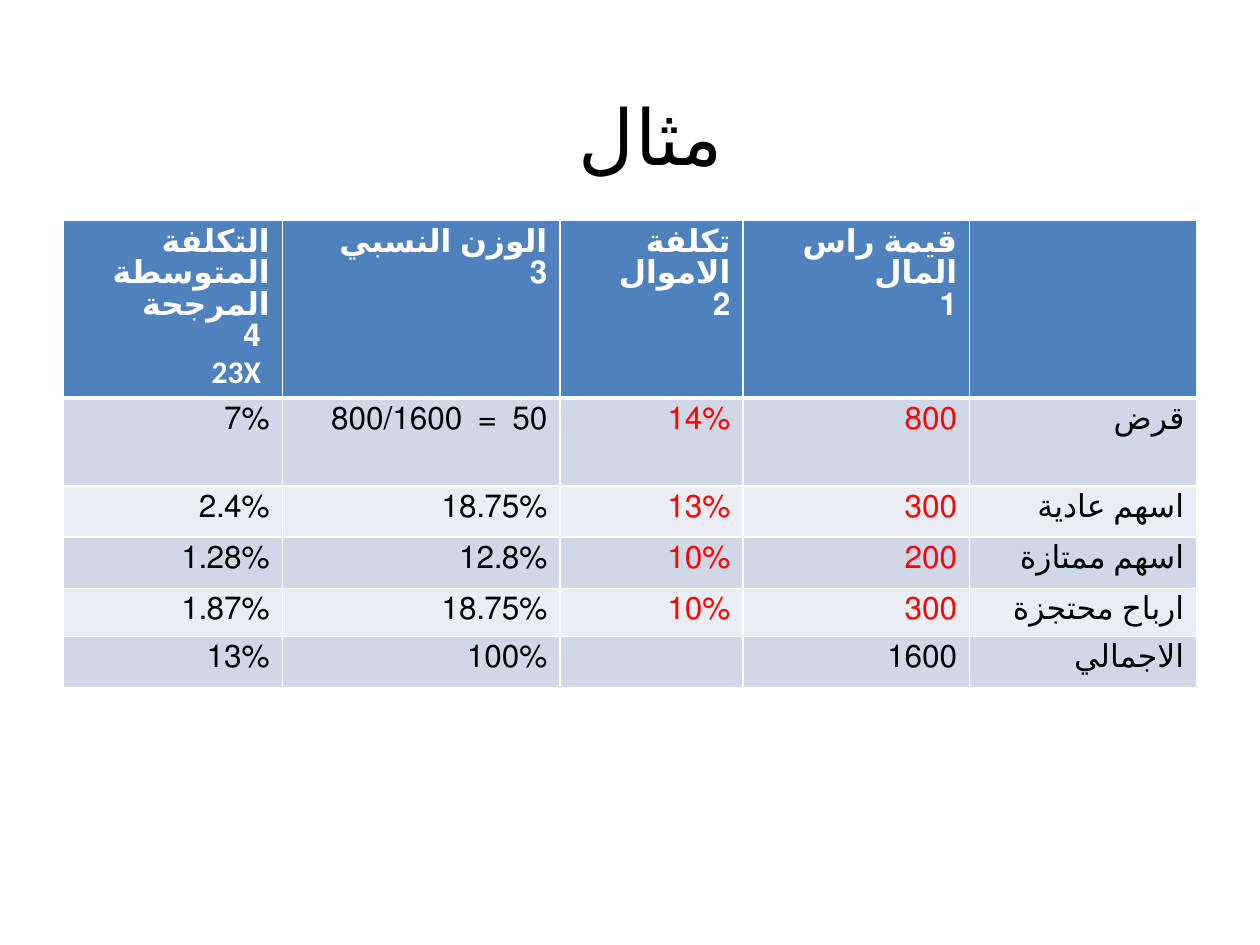
"""Build a slide with a worked example of the weighted average cost of capital."""
from lxml import etree
from pptx import Presentation
from pptx import util as u
from pptx.dml.color import RGBColor
from pptx.enum import lang, text
from pptx.oxml import ns

BLACK = RGBColor(0x00, 0x00, 0x00)
WHITE = RGBColor(0xFF, 0xFF, 0xFF)
RED = RGBColor(0xFF, 0x00, 0x00)
BLUE = RGBColor(0x4F, 0x81, 0xBD)
BANDS = (RGBColor(0xE9, 0xED, 0xF4), RGBColor(0xD0, 0xD8, 0xE8))

COLUMN_WIDTHS = (4.42, 5.6, 3.69, 4.57, 4.58)
ROW_HEIGHTS = (3.55, 1.78, 1.03, 1.03, 0.97, 1.03)
GIVEN_COLUMNS = (2, 3)
COSTS = (
    ("التكلفة المتوسطة المرجحة\n 4\n 23X", "الوزن النسبي\n3",
     "تكلفة الاموال\n2", "قيمة راس المال\n1", ""),
    ("7%", "50  =  800/1600", "14%", "800", "قرض"),
    ("2.4%", "18.75%", "13%", "300", "اسهم عادية "),
    ("1.28%", "12.8%", "10%", "200", "اسهم ممتازة"),
    ("1.87%", "18.75%", "10%", "300", "ارباح محتجزة"),
    ("13%", "100%", "", "1600", "الاجمالي"),
)


def write(frame, words, size=18, color=BLACK, bold=False,
          align=text.PP_ALIGN.RIGHT, font="Calibri"):
    for number, line in enumerate(words.split("\n")):
        para = frame.add_paragraph() if number else frame.paragraphs[0]
        para.alignment = align
        para._p.get_or_add_pPr().set("rtl", "1")
        if line:
            span = para.add_run()
            span.text = line
            span.font.language_id = lang.MSO_LANGUAGE_ID.ARABIC_EGYPT
            span.font.name = font
            span.font.size = u.Pt(size)
            span.font.bold = bold
            span.font.color.rgb = color


def rule(cell, side, points, color=WHITE):
    line = etree.Element(ns.qn(f"a:{side}"), w=str(u.Pt(points)))
    fill = etree.SubElement(line, ns.qn("a:solidFill"))
    etree.SubElement(fill, ns.qn("a:srgbClr"), val=str(color))
    cell._tc.get_or_add_tcPr().insert(0, line)


class Builder:
    def __init__(self, deck):
        self.page = deck.slides.add_slide(deck.slide_layouts[5])

    def title(self, words, left, top, width, height):
        box = self.page.shapes.title
        box.left, box.top = u.Cm(left), u.Cm(top)
        box.width, box.height = u.Cm(width), u.Cm(height)
        box.text_frame.vertical_anchor = text.MSO_ANCHOR.MIDDLE
        write(box.text_frame, words, size=44, align=text.PP_ALIGN.CENTER)

    def table(self, rows, left, top, widths, heights):
        table = self.page.shapes.add_table(
            len(rows), len(widths), u.Cm(left), u.Cm(top),
            u.Cm(sum(widths)), u.Cm(sum(heights))).table
        for column, width in zip(table.columns, widths):
            column.width = u.Cm(width)
        for r, (row, height) in enumerate(zip(rows, heights)):
            table.rows[r].height = u.Cm(height)
            header, total = r == 0, r == len(rows) - 1
            for c, words in enumerate(row):
                cell = table.cell(r, c)
                cell.fill.solid()
                cell.fill.fore_color.rgb = BLUE if header else BANDS[r % 2]
                if header:
                    rule(cell, "lnB", 3)
                given = c in GIVEN_COLUMNS and not total
                color = WHITE if header else RED if given else BLACK
                write(cell.text_frame, words, color=color, bold=header)


def main():
    deck = Presentation()
    deck.slide_width, deck.slide_height = u.Cm(25.4), u.Cm(19.05)
    builder = Builder(deck)
    builder.title("مثال ", 1.5, 1.12, 22.86, 3.18)
    builder.table(COSTS, 1.27, 4.45, COLUMN_WIDTHS, ROW_HEIGHTS)
    deck.save("out.pptx")


if __name__ == "__main__":
    main()
